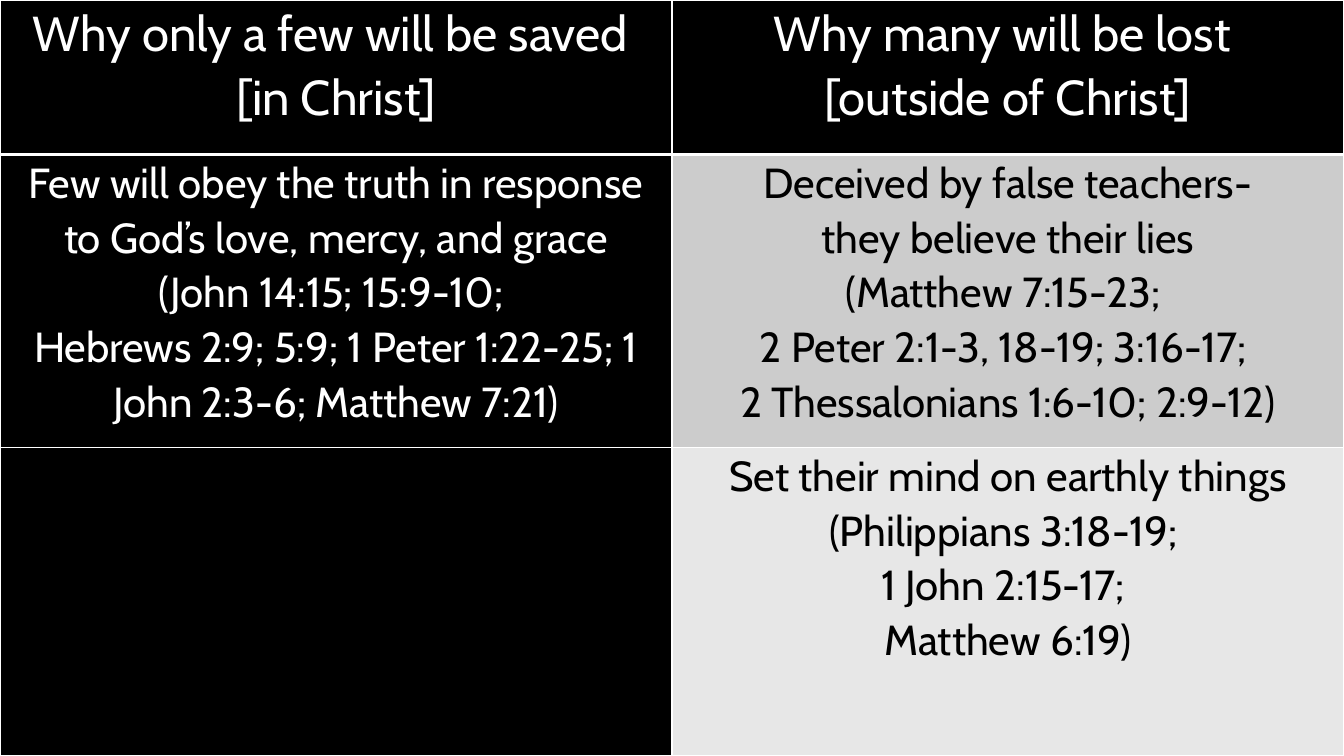
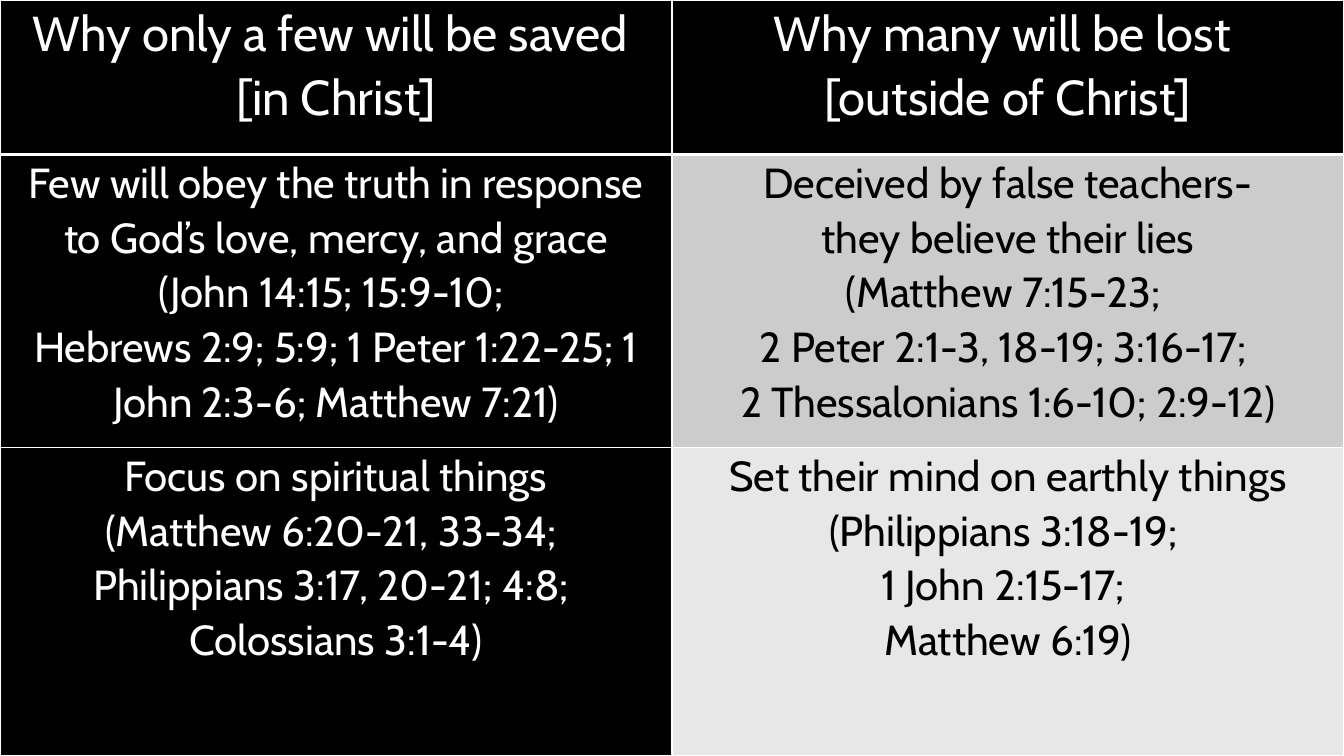
from lxml.etree import SubElement as Sub
from pptx import Presentation as Deck
from pptx.dml.color import RGBColor as RGB
from pptx.enum.text import PP_ALIGN as Align
from pptx.oxml.ns import qn
from pptx.util import Cm, Pt

BLACK = RGB(0x00, 0x00, 0x00)
WHITE = RGB(0xFF, 0xFF, 0xFF)
GRAY = RGB(0xCC, 0xCC, 0xCC)
PALE = RGB(0xE7, 0xE7, 0xE7)

WIDE, HIGH = Cm(33.87), Cm(19.05)
ROWS = [Cm(3.89), Cm(7.39), Cm(7.77)]
FILLS = [(BLACK, BLACK), (BLACK, GRAY), (BLACK, PALE)]
SIZES = [Pt(35), Pt(30), Pt(30)]
THIN, THICK = Pt(1), Pt(3)

# Wording, row by row
HEAD = ("Why only a few will be saved \n[in Christ]",
        "Why many will be lost \n[outside of Christ]")
TRUTH = ("Few will obey the truth in response to God’s love, mercy, and grace\n"
         "(John 14:15; 15:9-10; \n"
         "Hebrews 2:9; 5:9; 1 Peter 1:22-25; 1 John 2:3-6; Matthew 7:21)",
         "Deceived by false teachers-\nthey believe their lies\n"
         "(Matthew 7:15-23; \n2 Peter 2:1-3, 18-19; 3:16-17; \n"
         "2 Thessalonians 1:6-10; 2:9-12)")
FOCUS = ("Focus on spiritual things\n(Matthew 6:20-21, 33-34; \n"
         "Philippians 3:17, 20-21; 4:8; \nColossians 3:1-4)")
EARTH = ("Set their mind on earthly things\n(Philippians 3:18-19; \n"
         "1 John 2:15-17; \nMatthew 6:19)")


def put(item, **form):
    for name, value in form.items():
        setattr(item, name, value)


class Show:
    def __init__(self):
        self.deck = Deck()
        put(self.deck, slide_width=WIDE, slide_height=HIGH)
        self.slide = None

    def page(self):
        self.slide = self.deck.slides.add_slide(self.deck.slide_layouts[6])
        fill = self.slide.background.fill
        fill.solid()
        fill.fore_color.rgb = BLACK

    def edges(self, cell, top, bottom):
        # Borders come before the fill in the cell properties
        props = cell._tc.get_or_add_tcPr()
        sides = {"L": THIN, "R": THIN, "T": top, "B": bottom}
        for spot, (side, width) in enumerate(sides.items()):
            line = Sub(props, qn("a:ln" + side), w=str(width))
            solid = Sub(line, qn("a:solidFill"))
            Sub(solid, qn("a:srgbClr"), val=str(WHITE))
            props.insert(spot, line)

    def cell(self, cell, text, size, shade):
        put(cell, margin_left=Cm(0.18), margin_right=Cm(0.18),
            margin_top=0, margin_bottom=0)
        cell.fill.solid()
        cell.fill.fore_color.rgb = shade
        cell.text_frame.text = text
        for para in cell.text_frame.paragraphs:
            put(para, alignment=Align.CENTER, line_spacing=1.07)
            put(para.font, size=size, bold=False)
            for run in para.runs:
                put(run.font, name="Cabin", size=size, bold=False)
                run.font.color.rgb = WHITE if shade == BLACK else BLACK

    def table(self, texts):
        frame = self.slide.shapes.add_table(len(ROWS), 2, 0, 0, WIDE, HIGH)
        table = frame.table
        table.horz_banding = False
        for r, pair in enumerate(texts):
            table.rows[r].height = ROWS[r]
            top = THICK if r == 1 else THIN
            bottom = THICK if r == 0 else THIN
            for c, text in enumerate(pair):
                cell = table.cell(r, c)
                self.cell(cell, text, SIZES[r], FILLS[r][c])
                self.edges(cell, top, bottom)


def main():
    show = Show()
    # The last left cell is empty first, then filled
    for left in ("", FOCUS):
        show.page()
        show.table([HEAD, TRUTH, (left, EARTH)])
    show.deck.save("out.pptx")


if __name__ == "__main__":
    main()
